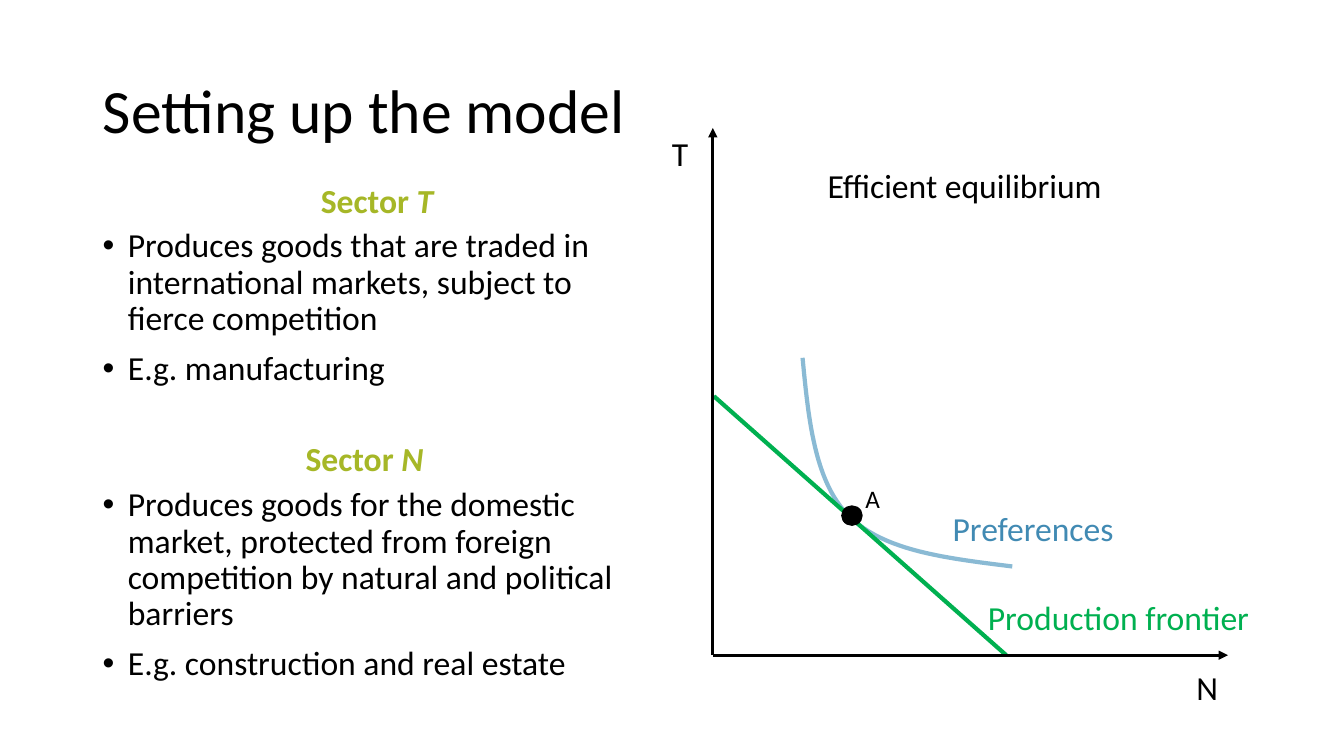
"""Build the slide that sets up the two-sector model."""
import pptx
import pptx.dml.color
import pptx.enum.shapes
import pptx.enum.text
import pptx.oxml
import pptx.oxml.ns
import pptx.util
from dataclasses import dataclass

Inches, Pt = pptx.util.Inches, pptx.util.Pt
ALIGN, ANCHOR = pptx.enum.text.PP_ALIGN, pptx.enum.text.MSO_ANCHOR
FIT = pptx.enum.text.MSO_AUTO_SIZE


@dataclass(frozen=True)
class Theme:
    """Colours, font and type sizes."""
    font: str = "Calibri"
    ink: str = "000000"
    heading: str = "A6B727"
    curve: str = "8ABAD4"
    preferences: str = "418AB3"
    frontier: str = "00B050"
    title: int = 44
    body: int = 24
    small: int = 18


T = Theme()
TITLE = "Setting up the model"
SECTORS = [
    ("T", (0.92, 1.62, 5.64, 0.61), (0.92, 2.22, 5.64, 2.01), [
        "Produces goods that are traded in international markets, subject to fierce competition",
        "E.g. manufacturing"]),
    ("N", (0.78, 4.34, 5.67, 0.45), (0.92, 4.79, 5.67, 2.38), [
        "Produces goods for the domestic market, protected from foreign competition "
        "by natural and political barriers",
        "E.g. construction and real estate"]),
]
ORIGIN = (7.07, 6.5)
LINES = [
    ((7.08, 3.93), (9.98, 6.5), T.frontier, 3, False),
    (ORIGIN, (12.18, 6.5), T.ink, 2.25, True),
    (ORIGIN, (7.07, 1.27), T.ink, 2.25, True),
]
CURVE = [
    ((7.96, 3.55), (8.02, 4.17), (8.08, 4.78), (8.42, 5.12)),
    ((8.42, 5.12), (8.77, 5.47), (9.4, 5.54), (10.04, 5.62)),
]
CURVE_STEPS = 24
POINT = (8.35, 5.02, 0.2, 0.19)
LABELS = [
    ("T", (6.56, 1.27, 0.37, 0.53), T.ink, T.body, ALIGN.CENTER),
    ("A", (8.48, 4.75, 0.35, 0.42), T.ink, T.small, ALIGN.CENTER),
    ("Efficient equilibrium", (8.11, 1.59, 3.02, 0.53), T.ink, T.body, ALIGN.LEFT),
    ("N", (11.76, 6.57, 0.43, 0.53), T.ink, T.body, ALIGN.CENTER),
    ("Production frontier", (9.7, 5.87, 2.86, 0.53), T.frontier, T.body, ALIGN.LEFT),
    ("Preferences", (9.35, 4.99, 1.85, 0.53), T.preferences, T.body, ALIGN.LEFT),
]


def rgb(color):
    """Turn a hex string into a colour."""
    return pptx.dml.color.RGBColor.from_string(color)


def box(at):
    """Convert a tuple of inches to lengths."""
    return [Inches(v) for v in at]


def add_xml(parent, tag, attrs=""):
    """Append one empty drawing element."""
    ns = pptx.oxml.ns.nsdecls("a")
    parent.append(pptx.oxml.parse_xml(f"<a:{tag} {ns} {attrs}/>"))


def write(tf, paragraphs, size=T.body, color=T.ink, bold=False, align=ALIGN.LEFT,
          anchor=ANCHOR.TOP, wrap=True, fit=FIT.NONE, spacing=None, before=0, bullet=False):
    """Fill a text frame; a paragraph is a list of (text, italic) runs."""
    tf.word_wrap, tf.auto_size, tf.vertical_anchor = wrap, fit, anchor
    for i, runs in enumerate(paragraphs):
        p = tf.add_paragraph() if i else tf.paragraphs[0]
        p.alignment, p.line_spacing, p.space_before = align, spacing, Pt(before)
        if bullet:
            pPr = p._p.get_or_add_pPr()
            pPr.set("marL", str(Inches(0.25)))
            pPr.set("indent", str(-Inches(0.25)))
            add_xml(pPr, "buFont", 'typeface="Arial"')
            add_xml(pPr, "buChar", 'char="•"')
        for text, italic in runs:
            r = p.add_run()
            r.text = text
            r.font.name, r.font.size, r.font.bold = T.font, Pt(size), bold
            r.font.italic, r.font.color.rgb = italic, rgb(color)


def add_curve(shapes):
    """Draw the indifference curve from its Bézier segments."""
    points = []
    for a, b, c, d in CURVE:
        for i in range(CURVE_STEPS + 1):
            t = i / CURVE_STEPS
            u = 1 - t
            points.append(tuple(
                Inches(u**3 * a[k] + 3 * u * u * t * b[k] + 3 * u * t * t * c[k] + t**3 * d[k])
                for k in (0, 1)))
    builder = shapes.build_freeform(*points[0])
    builder.add_line_segments(points[1:], close=False)
    sp = builder.convert_to_shape()
    sp.shadow.inherit = False
    sp.fill.background()
    sp.line.color.rgb, sp.line.width = rgb(T.curve), Pt(3)


def add_line(shapes, start, end, color, width, arrow):
    """Draw one straight line, with an arrowhead at its end if asked."""
    sp = shapes.add_connector(pptx.enum.shapes.MSO_CONNECTOR.STRAIGHT, *box(start + end))
    sp.line.color.rgb, sp.line.width = rgb(color), Pt(width)
    if arrow:
        add_xml(sp.line._get_or_add_ln(), "tailEnd", 'type="triangle"')
    add_xml(sp._element.spPr, "effectLst")


def add_diagram(s):
    """Draw the equilibrium diagram as one group."""
    shapes = s.shapes.add_group_shape().shapes
    add_curve(shapes)
    for line in LINES:
        add_line(shapes, *line)
    sp = shapes.add_shape(pptx.enum.shapes.MSO_SHAPE.OVAL, *box(POINT))
    sp.shadow.inherit = False
    sp.fill.solid()
    sp.fill.fore_color.rgb = sp.line.color.rgb = rgb(T.ink)
    sp.line.width = Pt(1)
    for text, at, color, size, align in LABELS:
        write(shapes.add_textbox(*box(at)).text_frame, [[(text, False)]], size=size,
              color=color, align=align, wrap=False, fit=FIT.SHAPE_TO_FIT_TEXT)


def main():
    """Build and save the slide."""
    prs = pptx.Presentation()
    prs.slide_width, prs.slide_height = Inches(13.33), Inches(7.5)
    s = prs.slides.add_slide(prs.slide_layouts[5])
    title = s.shapes.title
    title.left, title.top, title.width, title.height = box((0.92, 0.4, 11.5, 1.45))
    write(title.text_frame, [[(TITLE, False)]], size=T.title, anchor=ANCHOR.MIDDLE, spacing=0.9)
    for name, head_at, body_at, points in SECTORS:
        write(s.shapes.add_textbox(*box(head_at)).text_frame,
              [[("Sector ", False), (name, True)]], color=T.heading, bold=True,
              align=ALIGN.CENTER, anchor=ANCHOR.BOTTOM, spacing=0.8, before=10)
        write(s.shapes.add_textbox(*box(body_at)).text_frame,
              [[(point, False)] for point in points], spacing=0.9, before=10, bullet=True)
    add_diagram(s)
    prs.save("out.pptx")


if __name__ == "__main__":
    main()
